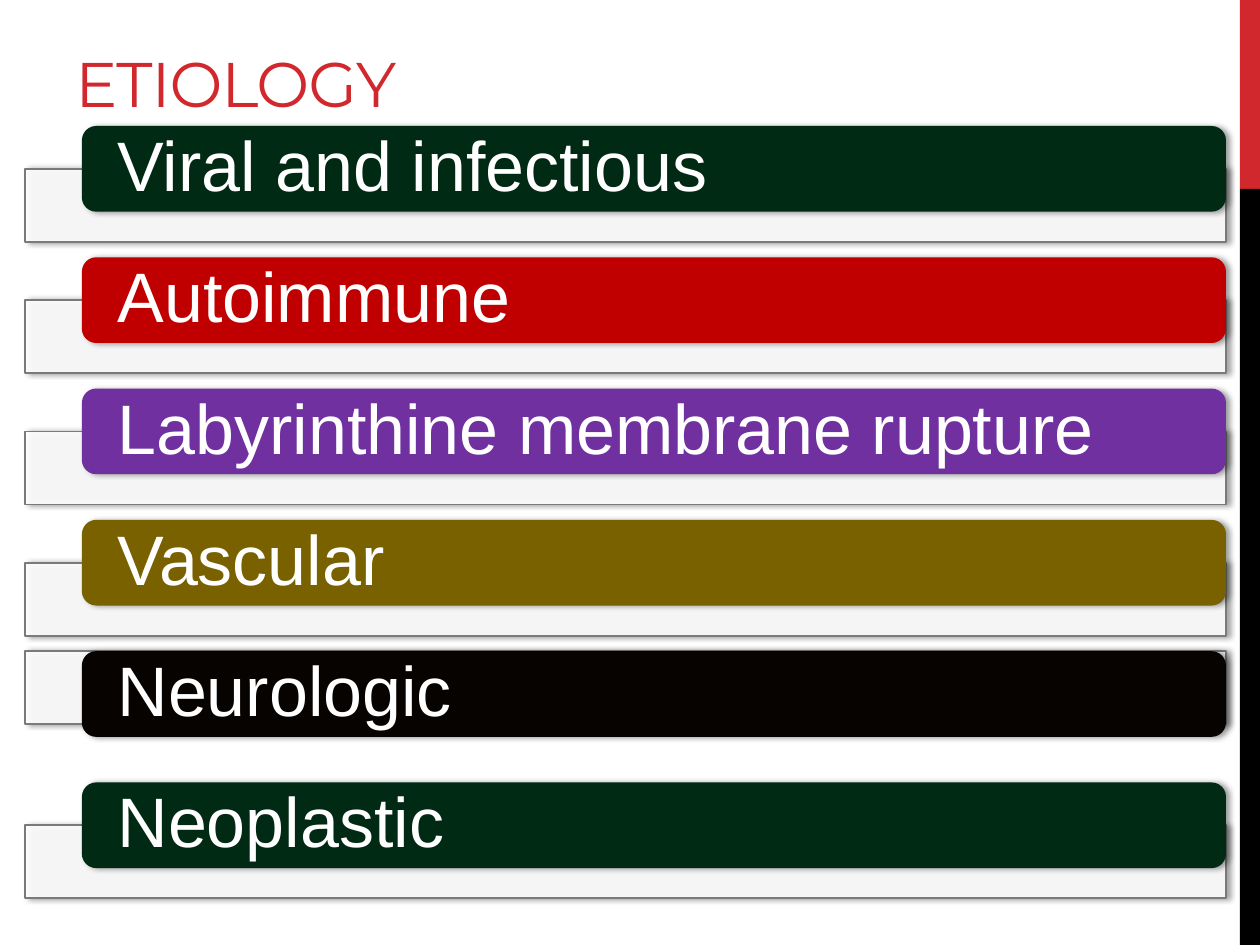
import pptx
import pptx.util
import pptx.dml.color
import pptx.enum.shapes
import pptx.enum.text
import pptx.oxml
import pptx.oxml.ns
import lxml.etree

Inches = pptx.util.Inches
Pt = pptx.util.Pt
RGBColor = pptx.dml.color.RGBColor
Shapes = pptx.enum.shapes.MSO_SHAPE
Anchor = pptx.enum.text.MSO_ANCHOR
qn = pptx.oxml.ns.qn

WHITE = RGBColor(0xFF, 0xFF, 0xFF)
BLACK = RGBColor(0x00, 0x00, 0x00)
RED = RGBColor(0xD1, 0x28, 0x2E)
GRAY = RGBColor(0x7A, 0x7A, 0x7A)
DARK_GREEN = RGBColor(0x00, 0x2A, 0x13)
CRIMSON = RGBColor(0xC0, 0x00, 0x00)
PURPLE = RGBColor(0x70, 0x30, 0xA0)
OLIVE = RGBColor(0x7A, 0x61, 0x00)
NEAR_BLACK = RGBColor(0x07, 0x03, 0x01)

PANEL_DROP = 0.34
CAUSES = [
    ("Viral and infectious", DARK_GREEN, PANEL_DROP),
    ("Autoimmune", CRIMSON, PANEL_DROP),
    ("Labyrinthine membrane rupture", PURPLE, PANEL_DROP),
    ("Vascular", OLIVE, PANEL_DROP),
    ("Neurologic", NEAR_BLACK, 0),
    ("Neoplastic", DARK_GREEN, PANEL_DROP),
]
TITLE_FONT = {"name": "Montserrat", "size": Pt(36)}
LABEL_FONT = {"name": "Arial", "size": Pt(40)}
TITLE_FRAME = {"word_wrap": True, "vertical_anchor": Anchor.BOTTOM}
LABEL_FRAME = {
    "word_wrap": True,
    "vertical_anchor": Anchor.MIDDLE,
    "margin_left": Inches(0.25),
    "margin_right": Inches(0.25),
    "margin_top": 0,
    "margin_bottom": 0,
}


def apply_format(target, values):
    for name, value in values.items():
        setattr(target, name, value)


def add_block(slide, kind, left, top, width, height, color):
    """Add a filled shape without outline or shadow; lengths in inches."""
    shape = slide.shapes.add_shape(
        kind, Inches(left), Inches(top), Inches(width), Inches(height))
    shape.shadow.inherit = False
    shape.fill.solid()
    shape.fill.fore_color.rgb = color
    shape.line.fill.background()
    return shape


def add_shadow(shape):
    """Fill the shape's effect list with a soft shadow to the right."""
    effects = shape._element.spPr.find(qn("a:effectLst"))
    shadow = lxml.etree.SubElement(
        effects, qn("a:outerShdw"), blurRad=str(Pt(3.1)), dist=str(Pt(1.8)),
        dir="0", rotWithShape="0")
    color = lxml.etree.SubElement(shadow, qn("a:srgbClr"), val=str(BLACK))
    lxml.etree.SubElement(color, qn("a:alpha"), val="40000")


def set_opacity(shape, percent):
    color = shape._element.spPr.find(qn("a:solidFill")).find(qn("a:srgbClr"))
    lxml.etree.SubElement(color, qn("a:alpha"), val=str(percent * 1000))


def write_text(shape, text, frame_format, font_format, color):
    frame = shape.text_frame
    apply_format(frame, frame_format)
    paragraph = frame.paragraphs[0]
    paragraph.alignment = pptx.enum.text.PP_ALIGN.LEFT
    run = paragraph.add_run()
    run.text = text
    apply_format(run.font, font_format)
    run.font.color.rgb = color
    return paragraph, run


def add_side_band(slide, left, top, width, height):
    red_height = height / 5
    add_block(slide, Shapes.RECTANGLE, left, top, width, red_height, RED)
    add_block(slide, Shapes.RECTANGLE, left, top + red_height, width,
              height - red_height, BLACK)


def add_title(slide, left, top, width, height):
    box = slide.shapes.add_textbox(
        Inches(left), Inches(top), Inches(width), Inches(height))
    paragraph, run = write_text(box, "ETIOLOGY", TITLE_FRAME, TITLE_FONT, RED)
    run.font._element.set("spc", "-60")


def add_cause(slide, left, top, width, cause):
    """Add a pale panel with a coloured label bar over it."""
    text, color, drop = cause
    panel = add_block(slide, Shapes.RECTANGLE, left, top + drop, width, 0.58, WHITE)
    set_opacity(panel, 90)
    apply_format(panel.line, {"width": Pt(1)})
    panel.line.color.rgb = GRAY
    add_shadow(panel)

    indent = 0.45
    bar = add_block(slide, Shapes.ROUNDED_RECTANGLE, left + indent, top,
                    width - indent, 0.68, color)
    add_shadow(bar)
    paragraph, run = write_text(bar, text, LABEL_FRAME, LABEL_FONT, WHITE)
    paragraph.line_spacing = 0.9


def add_cause_list(slide, left, top, width, height):
    """Spread the causes evenly; height runs from first to last bar top."""
    pitch = height / (len(CAUSES) - 1)
    for index, cause in enumerate(CAUSES):
        add_cause(slide, left, top + index * pitch, width, cause)


def main():
    presentation = pptx.Presentation()
    apply_format(presentation, {"slide_width": Inches(10), "slide_height": Inches(7.5)})
    slide = presentation.slides.add_slide(presentation.slide_layouts[6])
    add_side_band(slide, 9.84, 0, 0.16, 7.5)
    add_title(slide, 0.5, 0.17, 8.2, 0.83)
    add_cause_list(slide, 0.2, 1, 9.53, 5.21)
    presentation.save("out.pptx")


if __name__ == "__main__":
    main()
